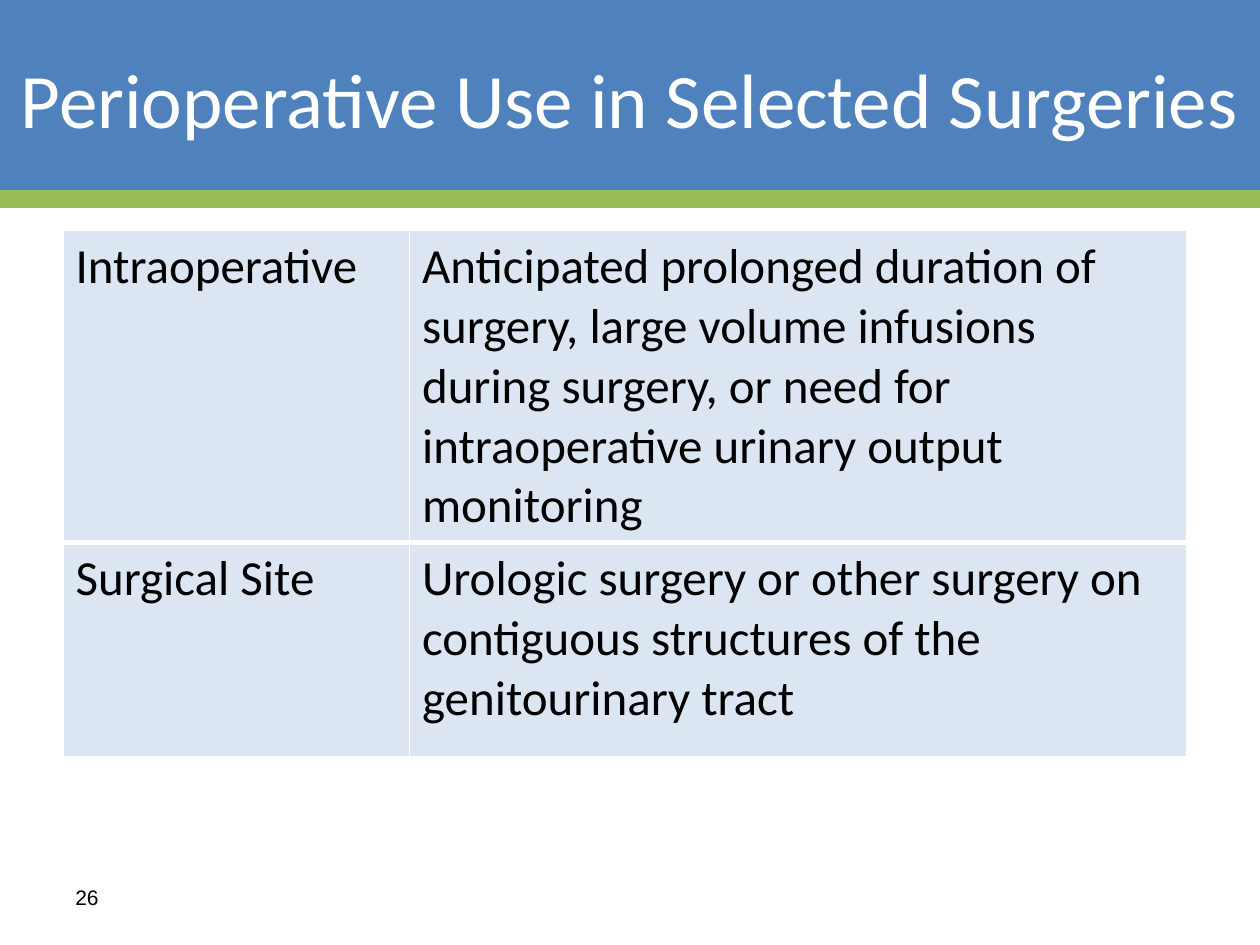
from dataclasses import dataclass

from lxml.etree import SubElement
from pptx import Presentation
from pptx.dml.color import RGBColor
from pptx.enum.shapes import MSO_CONNECTOR, MSO_SHAPE
from pptx.enum.text import MSO_ANCHOR, PP_ALIGN
from pptx.oxml.ns import qn
from pptx.util import Inches, Pt

BLUE = RGBColor(0x4F, 0x81, 0xBD)
GREEN = RGBColor(0x9B, 0xBB, 0x59)
PALE = RGBColor(0xDC, 0xE6, 0xF2)
WHITE = RGBColor(0xFF, 0xFF, 0xFF)
BLACK = RGBColor(0, 0, 0)


@dataclass
class Label:
    text: str
    box: tuple[float, float, float, float]
    size: int
    font: str
    color: RGBColor
    align: PP_ALIGN


@dataclass
class Indication:
    category: str
    use: str
    height: float
    bottom_border: float


LABELS = [
    Label("Perioperative Use in Selected Surgeries", (0, 0, 10, 1.55),
          44, "Calibri", WHITE, PP_ALIGN.CENTER),
    Label("26", (0.5, 6.92, 2.33, 0.4), 12, "Arial", BLACK, PP_ALIGN.LEFT),
]
INDICATIONS = [
    Indication("Intraoperative",
               "Anticipated prolonged duration of surgery, large volume infusions "
               "during surgery, or need for intraoperative urinary output monitoring",
               2.47, 3),
    Indication("Surgical Site",
               "Urologic surgery or other surgery on contiguous structures of the "
               "genitourinary tract",
               1.7, 1),
]
COLUMN_WIDTHS = (2.75, 6.17)


def style_text(p, size: int, font: str, color: RGBColor) -> None:
    for r in p.runs:
        r.font.size = Pt(size)
        r.font.name = font
        r.font.color.rgb = color


def add_label(s, label: Label) -> None:
    tf = s.shapes.add_textbox(*map(Inches, label.box)).text_frame
    tf.word_wrap = True
    tf.vertical_anchor = MSO_ANCHOR.MIDDLE
    tf.text = label.text
    p = tf.paragraphs[0]
    p.alignment = label.align
    style_text(p, label.size, label.font, label.color)


def set_borders(cell, top: float, bottom: float) -> None:
    tc_pr = cell._tc.get_or_add_tcPr()
    for side, width in (("L", 1), ("R", 1), ("T", top), ("B", bottom)):
        ln = SubElement(tc_pr, qn(f"a:ln{side}"), w=str(Pt(width)))
        fill = SubElement(ln, qn("a:solidFill"))
        SubElement(fill, qn("a:srgbClr"), val=str(WHITE))


def add_indications(s, rows: list[Indication]) -> None:
    table = s.shapes.add_table(
        len(rows), len(COLUMN_WIDTHS), Inches(0.5), Inches(1.83),
        Inches(sum(COLUMN_WIDTHS)), Inches(sum(row.height for row in rows))).table
    table.first_row = table.horz_banding = False
    for column, width in zip(table.columns, COLUMN_WIDTHS):
        column.width = Inches(width)
    top = 1
    for i, row in enumerate(rows):
        table.rows[i].height = Inches(row.height)
        for cell, text in zip(table.rows[i].cells, (row.category, row.use)):
            set_borders(cell, top, row.bottom_border)
            cell.fill.solid()
            cell.fill.fore_color.rgb = PALE
            cell.text = text
            style_text(cell.text_frame.paragraphs[0], 28, "Calibri", BLACK)
        top = row.bottom_border


def add_header(s) -> None:
    sp = s.shapes.add_shape(MSO_SHAPE.RECTANGLE, 0, 0, Inches(10), Inches(1.58))
    sp.shadow.inherit = False
    sp.fill.solid()
    sp.fill.fore_color.rgb = BLUE
    sp.line.fill.background()

    rule = s.shapes.add_connector(
        MSO_CONNECTOR.STRAIGHT, 0, Inches(1.58), Inches(10), Inches(1.58))
    rule.line.color.rgb = GREEN
    rule.line.width = Pt(10)
    SubElement(rule._element.spPr, qn("a:effectLst"))


def main() -> None:
    prs = Presentation()
    prs.slide_width, prs.slide_height = Inches(10), Inches(7.5)
    s = prs.slides.add_slide(prs.slide_layouts[6])

    # Header band and rule
    add_header(s)
    # Table of indications
    add_indications(s, INDICATIONS)
    # Title and page number
    for label in LABELS:
        add_label(s, label)

    prs.save("out.pptx")


if __name__ == "__main__":
    main()
